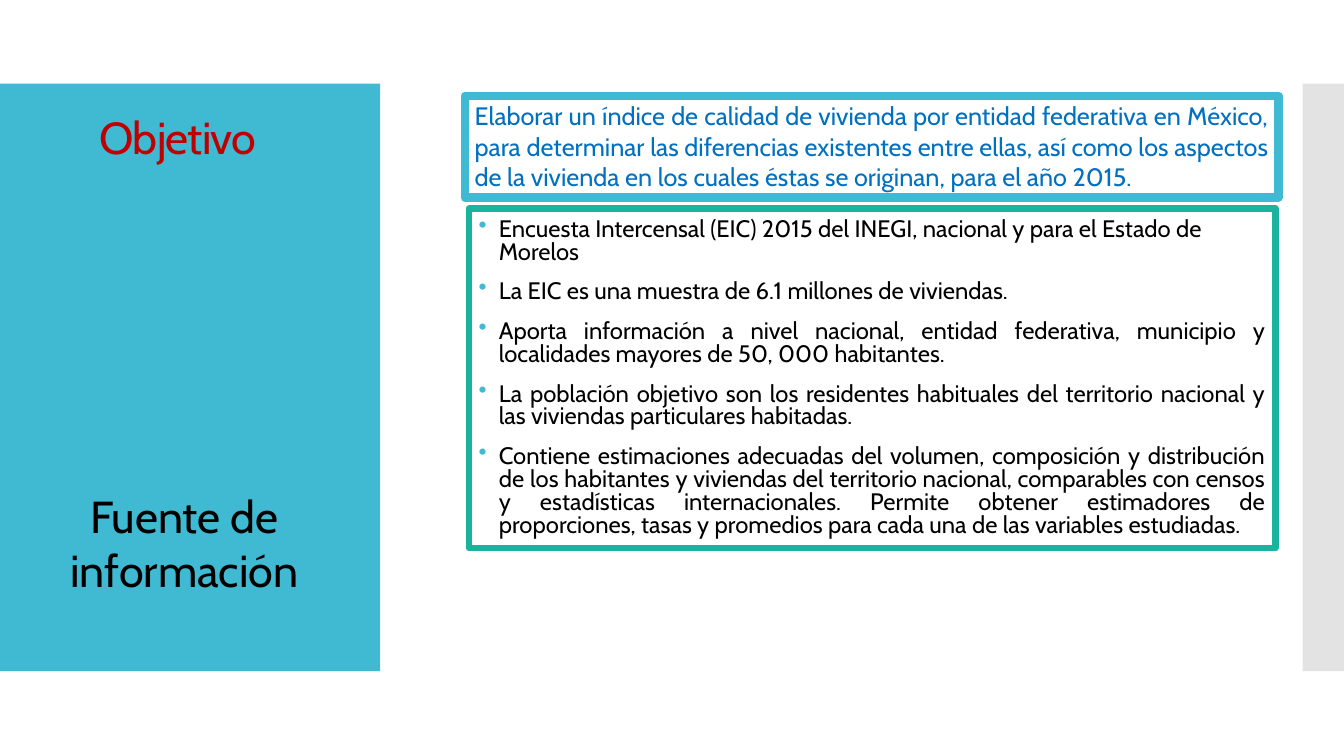
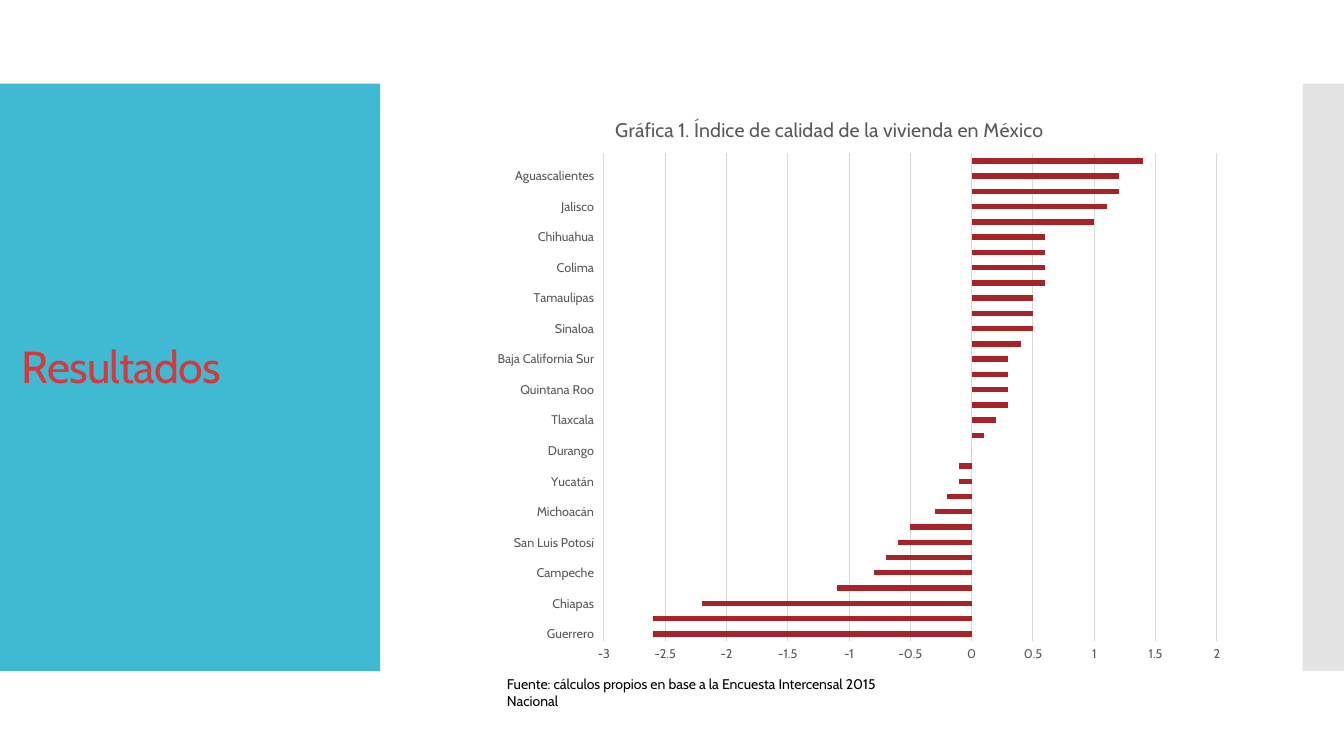
from lxml.etree import SubElement
from pptx import Presentation
from pptx.chart.data import CategoryChartData
from pptx.dml.color import RGBColor
from pptx.enum.chart import XL_CHART_TYPE, XL_TICK_LABEL_POSITION, XL_TICK_MARK
from pptx.enum.shapes import MSO_SHAPE
from pptx.enum.text import MSO_ANCHOR, PP_ALIGN
from pptx.oxml.ns import qn
from pptx.util import Emu, Pt

# Content: lengths in px, 100 to the inch
FONT = "Cabin"
BLUE, GREEN, GREY, INK, RULE = "40BAD2", "1AB39F", "C8C8C8", "595959", "D9D9D9"
BANDS = [((0, 83, 377, 583), BLUE, None), ((1292, 83, 42, 583), GREY, 50)]
HEAD = dict(size=32, lead=0.9, track=-60, anchor=MSO_ANCHOR.BOTTOM)

GOAL = ("Elaborar un índice de calidad de vivienda por entidad federativa en México, "
        "para determinar las diferencias existentes entre ellas, así como los aspectos "
        "de la vivienda en los cuales éstas se originan, para el año 2015.")
FACTS = [
    "Encuesta Intercensal (EIC) 2015 del INEGI, nacional y para el Estado de Morelos",
    "La EIC es una muestra de 6.1 millones de viviendas.",
    "Aporta información a nivel nacional, entidad federativa, municipio y "
    "localidades mayores de 50, 000 habitantes.",
    "La población objetivo son los residentes habituales del territorio nacional y "
    "las viviendas particulares habitadas.",
    "Contiene estimaciones adecuadas del volumen, composición y distribución de los "
    "habitantes y viviendas del territorio nacional, comparables con censos y "
    "estadísticas internacionales. Permite obtener estimadores de proporciones, tasas "
    "y promedios para cada una de las variables estudiadas.",
]
CAPTION = "Gráfica 1. Índice de calidad de la vivienda en México"
SOURCE = "Fuente: cálculos propios en base a la Encuesta Intercensal 2015 Nacional"
STATES = [
    ("Guerrero", -2.6), ("Oaxaca", -2.6), ("Chiapas", -2.2), ("Veracruz", -1.1),
    ("Campeche", -0.8), ("Puebla", -0.7), ("San Luis Potosí", -0.6), ("Tabasco", -0.5),
    ("Michoacán", -0.3), ("Hidalgo", -0.2), ("Yucatán", -0.1), ("Morelos", -0.1),
    ("Durango", 0), ("Nayarit", 0.1), ("Tlaxcala", 0.2), ("Zacatecas", 0.3),
    ("Quintana Roo", 0.3), ("México", 0.3), ("Baja California Sur", 0.3),
    ("Guanajuato", 0.4), ("Sinaloa", 0.5), ("Sonora", 0.5), ("Tamaulipas", 0.5),
    ("Querétaro", 0.6), ("Colima", 0.6), ("Baja California", 0.6), ("Chihuahua", 0.6),
    ("Coahuila de Zaragoza", 1), ("Jalisco", 1.1), ("Distrito Federal", 1.2),
    ("Aguascalientes", 1.2), ("Nuevo León", 1.4),
]
PLOT = {"x": 0.22, "y": 0.1, "w": 0.76, "h": 0.85}


def px(box):
    return [Emu(n * 9144) for n in box]


def tint(text):
    return RGBColor.from_string(text)


def style(font, size, color):
    font.name, font.size, font.bold = FONT, Pt(size), False
    font.color.rgb = tint(color)


def block(slide, box, fill, edge=None, width=0, alpha=None):
    shape = slide.shapes.add_shape(MSO_SHAPE.RECTANGLE, *px(box))
    shape.shadow.inherit = False
    shape.fill.solid()
    shape.fill.fore_color.rgb = tint(fill)
    if alpha:
        clr = shape.fill._xPr.find(".//" + qn("a:srgbClr"))
        SubElement(clr, qn("a:alpha"), val=str(alpha * 1000))
    if edge:
        shape.line.color.rgb = tint(edge)
        shape.line.width = Pt(width)
    else:
        shape.line.fill.background()
    return shape


def label(slide, box, *lines, **kind):
    return write(slide.shapes.add_textbox(*px(box)), *lines, **kind)


def write(shape, *lines, size=18, color="000000", align=PP_ALIGN.LEFT, lead=None,
          before=0, track=None, anchor=MSO_ANCHOR.TOP, bullet=None):
    frame = shape.text_frame
    frame.word_wrap = True
    frame.vertical_anchor = anchor
    for i, line in enumerate(lines):
        para = frame.paragraphs[0] if i == 0 else frame.add_paragraph()
        para.alignment = align
        para.space_before = Pt(before)
        if lead:
            para.line_spacing = lead
        run = para.add_run()
        run.text = line
        style(run.font, size, color)
        if track:
            run.font._element.set("spc", str(track))
        if bullet:
            props = para._p.get_or_add_pPr()
            props.set("marL", "182880")
            props.set("indent", "-182880")
            SubElement(SubElement(props, qn("a:buClr")), qn("a:srgbClr"), val=bullet)
            SubElement(props, qn("a:buChar"), char="•")
    return shape


def page(deck):
    slide = deck.slides.add_slide(deck.slide_layouts[6])
    for box, fill, alpha in BANDS:
        block(slide, box, fill, alpha=alpha)
    return slide


def graph(slide, box):
    data = CategoryChartData()
    data.categories = [name for name, _ in STATES]
    data.add_series("Índice", [value for _, value in STATES])
    chart = slide.shapes.add_chart(XL_CHART_TYPE.BAR_CLUSTERED, *px(box), data).chart
    style(chart.font, 10, "000000")
    chart.has_legend = False
    chart.has_title = True
    title = chart.chart_title.text_frame
    title.text = CAPTION
    style(title.paragraphs[0].runs[0].font, 14, INK)

    # Bars
    plot = chart.plots[0]
    plot.gap_width = 182
    plot.vary_by_categories = False
    bars = plot.series[0]
    bars.invert_if_negative = False
    bars.format.fill.solid()
    bars.format.fill.fore_color.rgb = tint("A72327")

    # Axes
    names, scale = chart.category_axis, chart.value_axis
    for axis in (names, scale):
        axis.major_tick_mark = axis.minor_tick_mark = XL_TICK_MARK.NONE
        style(axis.tick_labels.font, 9, INK)
    names.tick_label_position = XL_TICK_LABEL_POSITION.LOW
    scale.minimum_scale, scale.maximum_scale, scale.major_unit = -3, 2, 0.5
    scale.tick_labels.number_format = "General"
    scale.tick_labels.number_format_is_linked = False
    scale.format.line.fill.background()
    for rule in (names.format.line, scale.major_gridlines.format.line):
        rule.color.rgb = tint(RULE)
        rule.width = Pt(0.75)

    # Fixed inner plot area
    area = chart._chartSpace.chart.plotArea
    for old in area.findall(qn("c:layout")):
        area.remove(old)
    frame = SubElement(area, qn("c:layout"))
    area.insert(0, frame)
    spot = SubElement(frame, qn("c:manualLayout"))
    SubElement(spot, qn("c:layoutTarget"), val="inner")
    for key in "xy":
        SubElement(spot, qn(f"c:{key}Mode"), val="edge")
    for key, part in PLOT.items():
        SubElement(spot, qn(f"c:{key}"), val=str(part))


def main():
    deck = Presentation()
    deck.slide_width, deck.slide_height = px((1333, 750))

    # Goal and source of data
    slide = page(deck)
    facts = block(slide, (465, 207, 800, 337), "FFFFFF", GREEN, 4.5)
    write(facts, *FACTS, size=17, lead=0.8, before=12, bullet=BLUE,
          align=PP_ALIGN.JUSTIFY, anchor=MSO_ANCHOR.MIDDLE)
    facts.text_frame.paragraphs[0].alignment = PP_ALIGN.LEFT
    label(slide, (28, 480, 310, 156), "Fuente de información", size=32, before=12,
          align=PP_ALIGN.CENTER)
    label(slide, (89, 109, 256, 59), "Objetivo", color="C00000", **HEAD)
    goal = block(slide, (461, 95, 807, 101), "FFFFFF", BLUE, 6)
    write(goal, GOAL, color="0070C0", align=PP_ALIGN.JUSTIFY)

    # Results
    slide = page(deck)
    label(slide, (12, 135, 310, 260), "Resultados", color="D5393D", **HEAD)
    graph(slide, (423, 95, 800, 570))
    label(slide, (493, 665, 435, 44), SOURCE, size=10)
    deck.save("out.pptx")


if __name__ == "__main__":
    main()
